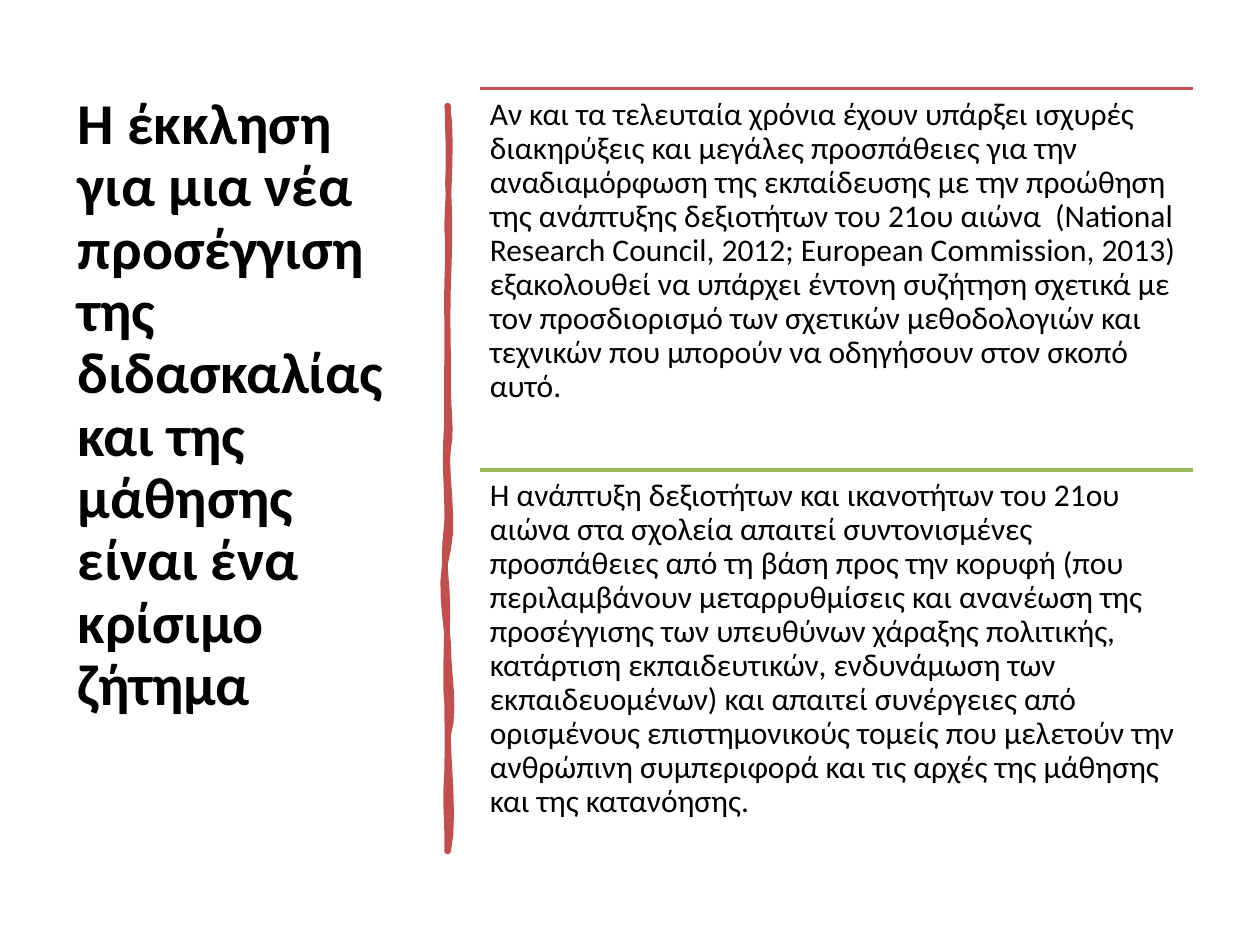
import pptx
import pptx.util
import pptx.dml.color
import pptx.enum.shapes
import pptx.enum.text
import pptx.oxml.ns
import lxml.etree

Pt = pptx.util.Pt
COLORS = {"text": "000000", "red": "C0504D", "green": "9BBB59"}

TITLE = "Η έκκληση για μια νέα προσέγγιση της διδασκαλίας και της μάθησης είναι ένα κρίσιμο ζήτημα"
SECTIONS = [
    ("red", "Αν και τα τελευταία χρόνια έχουν υπάρξει ισχυρές διακηρύξεις και μεγάλες "
            "προσπάθειες για την αναδιαμόρφωση της εκπαίδευσης με την προώθηση της ανάπτυξης "
            "δεξιοτήτων του 21ου αιώνα  (National Research Council, 2012; European Commission, "
            "2013) εξακολουθεί να υπάρχει έντονη συζήτηση σχετικά με τον προσδιορισμό των "
            "σχετικών μεθοδολογιών και τεχνικών που μπορούν να οδηγήσουν στον σκοπό αυτό."),
    ("green", "Η ανάπτυξη δεξιοτήτων και ικανοτήτων του 21ου αιώνα στα σχολεία απαιτεί "
              "συντονισμένες προσπάθειες από τη βάση προς την κορυφή (που περιλαμβάνουν "
              "μεταρρυθμίσεις και ανανέωση της προσέγγισης των υπευθύνων χάραξης πολιτικής, "
              "κατάρτιση εκπαιδευτικών, ενδυνάμωση των εκπαιδευομένων) και απαιτεί συνέργειες "
              "από ορισμένους επιστημονικούς τομείς που μελετούν την ανθρώπινη συμπεριφορά και "
              "τις αρχές της μάθησης και της κατανόησης."),
]

# Brush stroke edges: start point, then (control, control, end) per curve
RIGHT_EDGE = [
    (256, 60.5),
    (255.5, 74), (257, 83.5), (256, 105),
    (257, 125), (257, 137.5), (256, 162.5),
    (255.5, 186), (256, 188.5), (256, 211.5),
    (255.5, 234), (258.5, 246), (256, 256.5),
    (254, 268), (260, 298), (256, 314),
    (251, 332.5), (254, 348), (256, 367),
    (256, 385), (260.5, 405.5), (256, 420.5),
    (256, 436.5), (260, 470), (256, 486.5),
]
LEFT_EDGE = [
    (255.5, 486.5),
    (256, 464.5), (254, 463.5), (255.5, 441.5),
    (256, 420), (255.5, 410.5), (255.5, 401),
    (254, 393), (256, 355.5), (255.5, 343.5),
    (255.5, 332.5), (252.5, 322), (255.5, 299),
    (256, 278), (253.5, 268.5), (255.5, 241),
    (255, 216), (256, 201), (255.5, 180),
    (255, 155.5), (257, 146), (255.5, 130.5),
    (255.5, 119), (259, 75), (255.5, 60.5),
]


def sample_curves(points, steps=6):
    """Turn chained cubic curves into a list of points."""
    result = [points[0]]
    for i in range(0, len(points) - 1, 3):
        a, b, c, d = points[i:i + 4]
        for n in range(1, steps + 1):
            t = n / steps
            u = 1 - t
            result.append(tuple(
                u**3 * a[k] + 3 * u * u * t * b[k] + 3 * u * t * t * c[k] + t**3 * d[k]
                for k in (0, 1)))
    return result


class SlideBuilder:
    font = "Calibri"
    line_spacing = 0.9

    def __init__(self, slide):
        self.s = slide

    def color(self, name):
        return pptx.dml.color.RGBColor.from_string(COLORS[name])

    def text(self, text, x, y, w, h, size, insets, bold=False):
        sp = self.s.shapes.add_textbox(Pt(x), Pt(y), Pt(w), Pt(h))
        tf = sp.text_frame
        tf.word_wrap = True
        tf.vertical_anchor = pptx.enum.text.MSO_ANCHOR.TOP
        tf.margin_left = tf.margin_right = Pt(insets[0])
        tf.margin_top = tf.margin_bottom = Pt(insets[1])
        tf.text = text
        p = tf.paragraphs[0]
        p.line_spacing = self.line_spacing
        r = p.runs[0]
        r.font.name = self.font
        r.font.size = Pt(size)
        r.font.bold = bold
        r.font.color.rgb = self.color("text")

    def rule(self, x, y, w, color):
        line = self.s.shapes.add_connector(
            pptx.enum.shapes.MSO_CONNECTOR.STRAIGHT, Pt(x), Pt(y), Pt(x + w), Pt(y))
        line.line.color.rgb = self.color(color)
        line.line.width = Pt(2)
        lxml.etree.SubElement(line._element.spPr, pptx.oxml.ns.qn("a:effectLst"))

    def brush_stroke(self, points, color, width):
        # Hundredths of a point keep the small wobble exact
        (x, y), *rest = [(round(px * 100), round(py * 100)) for px, py in points]
        fb = self.s.shapes.build_freeform(x, y, scale=Pt(1) / 100)
        fb.add_line_segments(rest, close=True)
        sp = fb.convert_to_shape()
        sp.shadow.inherit = False
        sp.fill.solid()
        sp.fill.fore_color.rgb = self.color(color)
        sp.line.color.rgb = self.color(color)
        sp.line.width = Pt(width)


def main():
    prs = pptx.Presentation()
    prs.slide_width, prs.slide_height = Pt(720), Pt(540)
    b = SlideBuilder(prs.slides.add_slide(prs.slide_layouts[6]))

    # Title on the left
    b.text(TITLE, 37.5, 50.5, 201.5, 440, 33, (7.2, 3.6), bold=True)

    # Hand-drawn divider
    b.brush_stroke(sample_curves(RIGHT_EDGE) + sample_curves(LEFT_EDGE), "red", 3.25)

    # Two sections, each under a coloured rule
    left, top, width, height = 274.5, 50.5, 407.5, 218
    for i, (color, text) in enumerate(SECTIONS):
        y = top + i * height
        b.rule(left, y, width, color)
        b.text(text, left, y, width, height, 18, (5.4, 5.4))

    prs.save("out.pptx")


if __name__ == "__main__":
    main()
